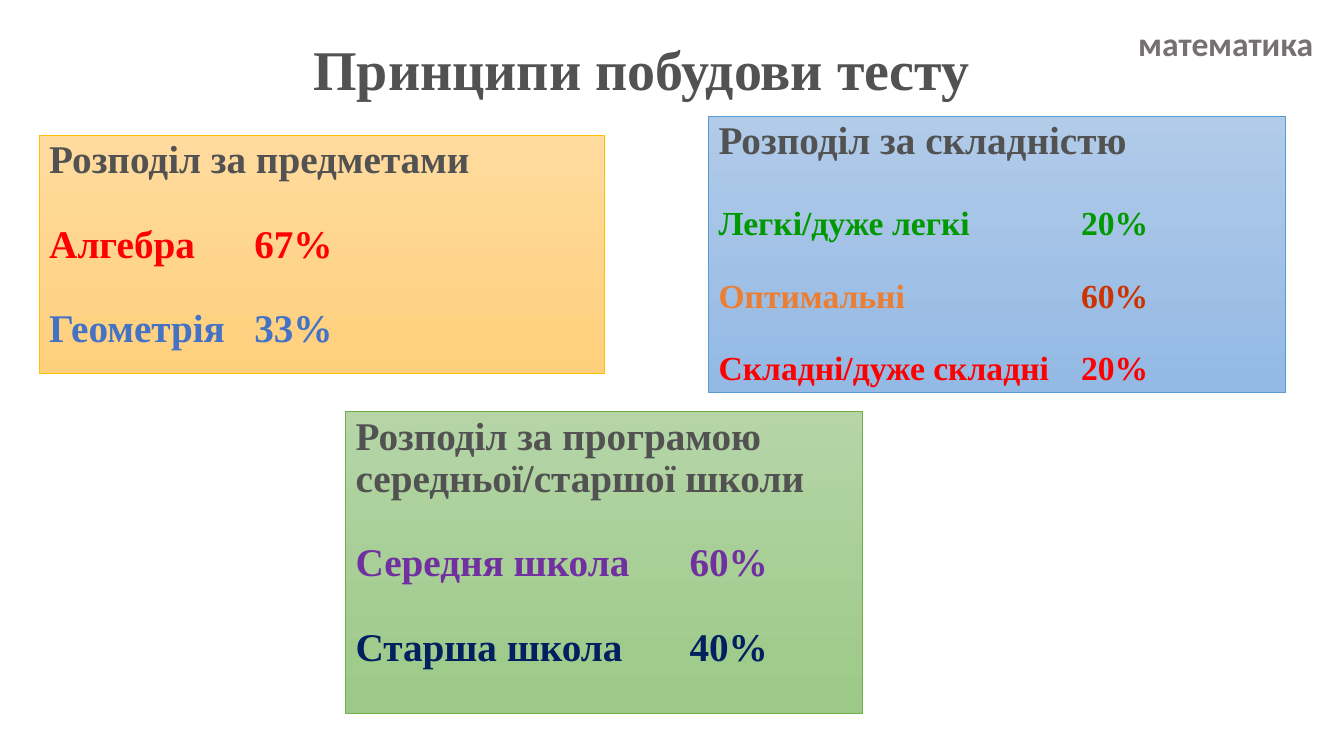
from lxml.etree import SubElement
from pptx import Presentation
from pptx.dml.color import RGBColor
from pptx.enum.shapes import MSO_SHAPE
from pptx.enum.text import MSO_ANCHOR, PP_ALIGN
from pptx.oxml.ns import qn
from pptx.util import Pt


def color(hex_value):
    return RGBColor.from_string(hex_value)


def apply(target, values):
    for name, value in values.items():
        setattr(target, name, value)


class SlideBuilder:
    serif = "Times New Roman"
    heading_color = "525252"
    line_spacing = 0.9
    frame_format = {"word_wrap": True, "vertical_anchor": MSO_ANCHOR.TOP}

    def __init__(self, slide):
        self.slide = slide

    def run(self, paragraph, text, size, hex_value, font=serif):
        part = paragraph.add_run()
        part.text = text
        apply(part.font, {"name": font, "size": Pt(size), "bold": True})
        part.font.color.rgb = color(hex_value)

    def label(self, bounds, text, size, hex_value, font=serif, spacing=1.0):
        box = self.slide.shapes.add_textbox(*map(Pt, bounds))
        apply(box.text_frame, self.frame_format)
        paragraph = box.text_frame.paragraphs[0]
        apply(paragraph, {"alignment": PP_ALIGN.CENTER, "line_spacing": spacing})
        self.run(paragraph, text, size, hex_value, font)

    def panel(self, bounds, gradient, border, heading, rows, size, gaps, tab):
        box = self.slide.shapes.add_shape(MSO_SHAPE.RECTANGLE, *map(Pt, bounds))
        box.shadow.inherit = False
        box.fill.gradient()
        box.fill.gradient_angle = 270
        for stop, hex_value, position in zip(box.fill.gradient_stops, gradient, (0, 1)):
            stop.color.rgb = color(hex_value)
            stop.position = position
        box.line.color.rgb = color(border)
        box.line.width = Pt(0.5)

        frame = box.text_frame
        apply(frame, self.frame_format)
        title = frame.paragraphs[0]
        paragraph_format = {"alignment": PP_ALIGN.LEFT, "line_spacing": self.line_spacing}
        apply(title, paragraph_format)
        self.run(title, heading, 28, self.heading_color)

        for (topic, share, topic_color, share_color), gap in zip(rows, gaps):
            entry = frame.add_paragraph()
            apply(entry, {**paragraph_format, "space_before": Pt(gap)})
            tabs = SubElement(entry._p.get_or_add_pPr(), qn("a:tabLst"))
            SubElement(tabs, qn("a:tab"), pos=str(Pt(tab)), algn="l")
            self.run(entry, topic + "\t", size, topic_color)
            self.run(entry, share, size, share_color)


def main():
    deck = Presentation()
    apply(deck, {"slide_width": Pt(960), "slide_height": Pt(540)})
    builder = SlideBuilder(deck.slides.add_slide(deck.slide_layouts[6]))

    builder.label((804.24, 12.96, 142.56, 36), "математика", 24, "767171", "Calibri")
    builder.panel(
        (28.08, 96.48, 403.92, 169.92), ("FFDB9E", "FFD07C"), "FFC000",
        "Розподіл за предметами",
        [("Алгебра", "67%", "FF0000", "FF0000"),
         ("Геометрія", "33%", "4472C4", "4472C4")],
        28, (30, 30), 146.5)
    builder.label((173.52, 26.64, 569.52, 69.84), "Принципи побудови тесту",
                  40, builder.heading_color, spacing=builder.line_spacing)
    builder.panel(
        (506.16, 82.8, 411.84, 197.28), ("B1CBE9", "93B9E4"), "5B9BD5",
        "Розподіл за складністю",
        [("Легкі/дуже легкі", "20%", "009900", "009900"),
         ("Оптимальні", "60%", "ED7D31", "CC3300"),
         ("Складні/дуже складні", "20%", "FF0000", "FF0000")],
        24, (31, 26, 26), 259)
    builder.panel(
        (246.96, 293.76, 369.36, 216), ("B5D5A7", "9CC987"), "70AD47",
        "Розподіл за програмою середньої/старшої школи",
        [("Середня школа", "60%", "7030A0", "7030A0"),
         ("Старша школа", "40%", "002060", "002060")],
        28, (30, 30), 238.5)

    deck.save("out.pptx")


if __name__ == "__main__":
    main()
